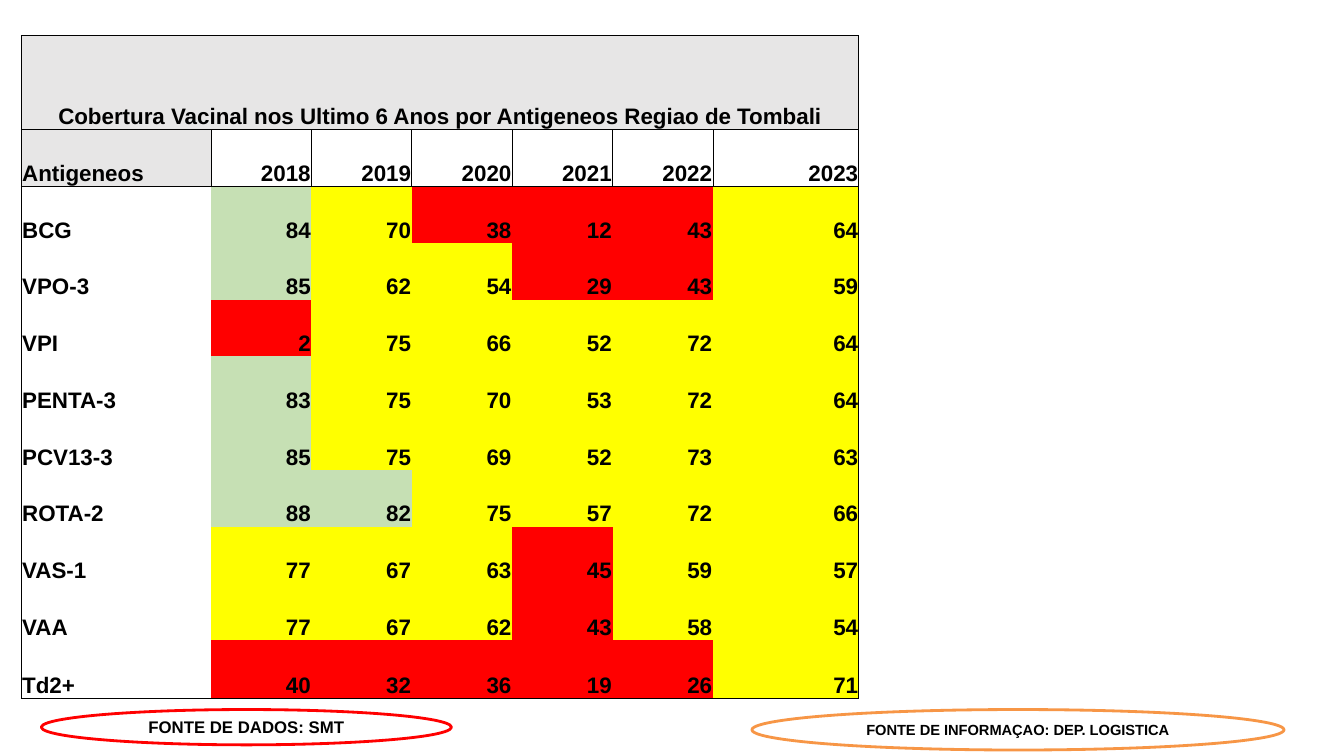
import pptx
import pptx.util
import pptx.dml.color
import pptx.enum.shapes
import pptx.enum.text
import lxml.etree

Cm, Pt = pptx.util.Cm, pptx.util.Pt
ALIGN, ANCHOR = pptx.enum.text.PP_ALIGN, pptx.enum.text.MSO_ANCHOR
INK = {"black": "000000", "grey": "E7E6E6", "green": "C6E0B4",
       "yellow": "FFFF00", "red": "FF0000", "orange": "F79646", "white": "FFFFFF"}
NS = "{http://schemas.openxmlformats.org/drawingml/2006/main}"


def style(par, size, align):
    par.alignment = align
    par.font.name, par.font.size, par.font.bold = "Arial", Pt(size), True
    par.font.color.rgb = pptx.dml.color.RGBColor.from_string(INK["black"])


def border(cell, side, width):
    line = lxml.etree.SubElement(cell._tc.get_or_add_tcPr(), NS + "ln" + side)
    if width:
        line.set("w", str(Pt(width)))
        fill = lxml.etree.SubElement(line, NS + "solidFill")
        lxml.etree.SubElement(fill, NS + "srgbClr", val=INK["black"])
    else:
        line.set("w", "0")
        lxml.etree.SubElement(line, NS + "noFill")


deck = pptx.Presentation()
deck.slide_width, deck.slide_height = Cm(33.87), Cm(19.05)
slide = deck.slides.add_slide(deck.slide_layouts[6])

# Coverage by antigen, in percent
title = "Cobertura Vacinal nos Ultimo 6 Anos por Antigeneos Regiao de Tombali"
rows = [
    [title] + [""] * 6,
    ["Antigeneos", 2018, 2019, 2020, 2021, 2022, 2023],
    ["BCG", 84, 70, 38, 12, 43, 64],
    ["VPO-3", 85, 62, 54, 29, 43, 59],
    ["VPI", 2, 75, 66, 52, 72, 64],
    ["PENTA-3", 83, 75, 70, 53, 72, 64],
    ["PCV13-3", 85, 75, 69, 52, 73, 63],
    ["ROTA-2", 88, 82, 75, 57, 72, 66],
    ["VAS-1", 77, 67, 63, 45, 59, 57],
    ["VAA", 77, 67, 62, 43, 58, 54],
    ["Td2+", 40, 32, 36, 19, 26, 71],
]
wides = [4.78] + [2.53] * 5 + [3.68]
highs = [2.36] + [1.43] * 9 + [1.47]
end, foot = len(wides) - 1, len(highs) - 1

# Table frame
table = slide.shapes.add_table(len(highs), len(wides), Cm(0.54), Cm(0.9),
                               Cm(sum(wides)), Cm(sum(highs))).table
table.first_row = table.horz_banding = False
for col, wide in zip(table.columns, wides):
    col.width = Cm(wide)
for row, high in zip(table.rows, highs):
    row.height = Cm(high)
table.cell(0, 0).merge(table.cell(0, end))

# Cells: thick outer frame, thin lines around the year row
for r, row in enumerate(rows):
    for c, value in enumerate(row):
        cell = table.cell(r, c)
        cell.vertical_anchor = ANCHOR.BOTTOM
        cell.margin_left = cell.margin_right = cell.margin_top = Cm(0.02)
        cell.margin_bottom = 0
        thin = 0.5 if r == 1 else 0
        border(cell, "L", 1 if c == 0 else thin)
        border(cell, "R", 1 if c == end or r == 0 else thin)
        border(cell, "T", 1 if r == 0 else 0.5 if r < 3 else 0)
        border(cell, "B", 1 if r == foot else 0.5 if r < 2 else 0)

        # Colour by level: 80 and up, 50 and up, below 50
        if r == 0 or (r == 1 and c == 0):
            tone = "grey"
        elif r == 1 or c == 0:
            tone = None
        else:
            tone = "green" if value >= 80 else "yellow" if value >= 50 else "red"
        if tone:
            cell.fill.solid()
            cell.fill.fore_color.rgb = pptx.dml.color.RGBColor.from_string(INK[tone])
        else:
            cell.fill.background()

        cell.text = str(value)
        align = ALIGN.CENTER if r == 0 else ALIGN.RIGHT if c else ALIGN.LEFT
        style(cell.text_frame.paragraphs[0], 16, align)

# Source labels
labels = [
    ("FONTE DE DADOS: SMT", 1.04, 10.34, 0.89, 12, "red", None),
    ("FONTE DE INFORMAÇAO: DEP. LOGISTICA", 18.95, 13.41, 1.02, 10.5, "orange", "white"),
]
for text, left, wide, high, size, edge, tone in labels:
    oval = slide.shapes.add_shape(pptx.enum.shapes.MSO_SHAPE.OVAL,
                                  Cm(left), Cm(17.88), Cm(wide), Cm(high))
    oval.shadow.inherit = False
    oval.line.color.rgb = pptx.dml.color.RGBColor.from_string(INK[edge])
    oval.line.width = Pt(2)
    if tone:
        oval.fill.solid()
        oval.fill.fore_color.rgb = pptx.dml.color.RGBColor.from_string(INK[tone])
    else:
        oval.fill.background()
    frame = oval.text_frame
    frame.text = text
    frame.word_wrap = True
    frame.vertical_anchor = ANCHOR.MIDDLE
    style(frame.paragraphs[0], size, ALIGN.CENTER)

deck.save("out.pptx")
